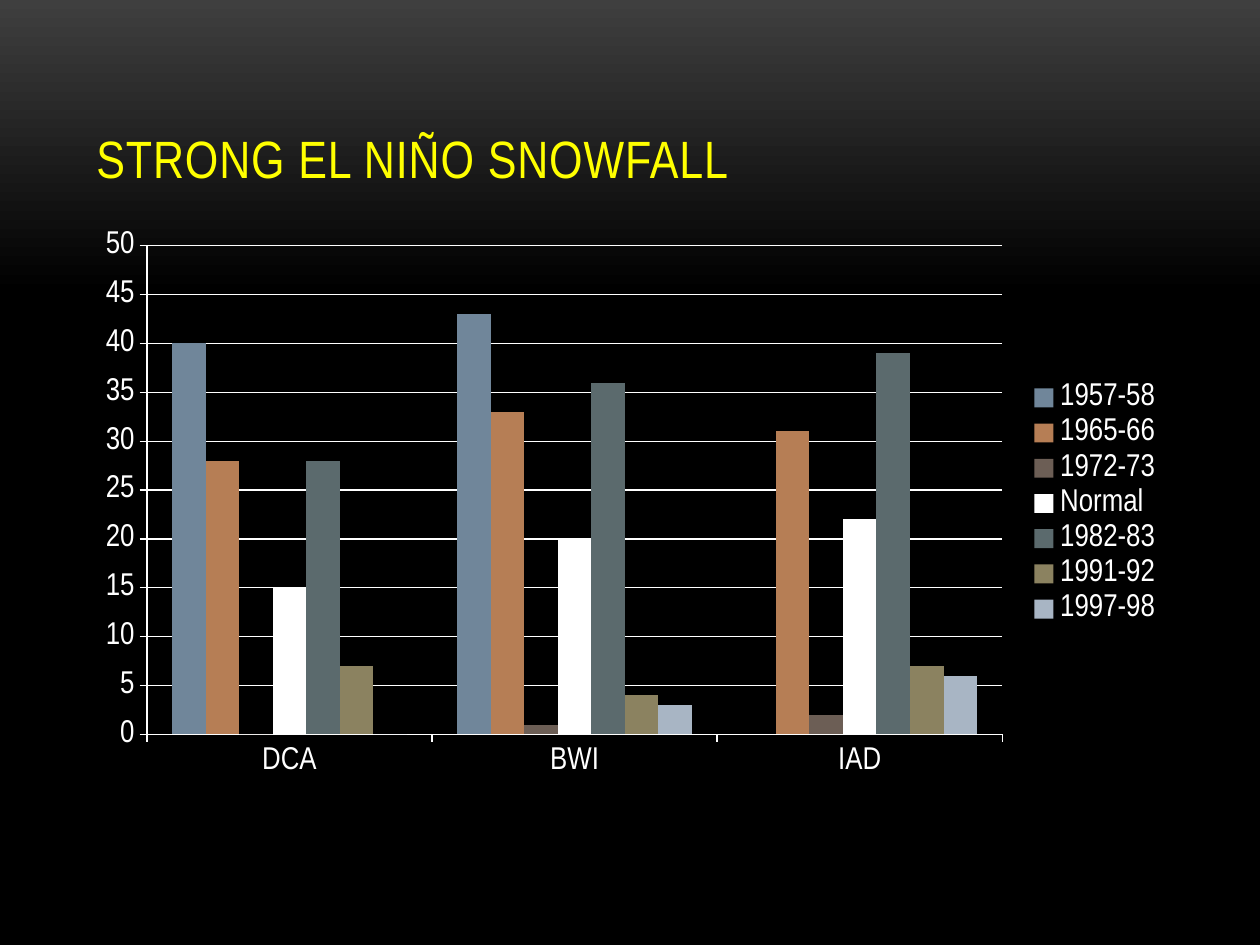
from pptx import Presentation
from pptx.chart.data import CategoryChartData
from pptx.dml.color import RGBColor
from pptx.enum.chart import XL_CHART_TYPE, XL_LEGEND_POSITION, XL_TICK_MARK
from pptx.enum.text import MSO_ANCHOR
from pptx.util import Emu, Pt

PX_PER_INCH = 126
FONT = "Arial Narrow"
COLORS = {
    "title": "FFFF00",
    "text": "FFFFFF",
    "glow": "3F3F3F",
    "night": "000000",
}
AIRPORTS = ["DCA", "BWI", "IAD"]
WINTERS = [
    ("1957-58", (40, 43, None), "70869A"),
    ("1965-66", (28, 33, 31), "B67E55"),
    ("1972-73", (0, 1, 2), "6C5E55"),
    ("Normal", (15, 20, 22), "FFFFFF"),
    ("1982-83", (28, 36, 39), "5B6A6D"),
    ("1991-92", (7, 4, 7), "8B8260"),
    ("1997-98", (0, 3, 6), "A8B5C4"),
]


def px(length):
    return Emu(round(length * 914400 / PX_PER_INCH))


def rgb(name):
    return RGBColor.from_string(COLORS[name])


def set_font(font, size, color):
    for name, value in {"name": FONT, "size": Pt(size), "bold": False}.items():
        setattr(font, name, value)
    font.color.rgb = rgb(color)


def paint_background(page):
    fill = page.background.fill
    fill.gradient()
    fill.gradient_angle = 270
    for stop, (position, color) in zip(
        fill.gradient_stops, [(0, "glow"), (0.31, "night")]
    ):
        stop.position = position
        stop.color.rgb = rgb(color)


def add_title(page, left, top, width, height):
    box = page.shapes.add_textbox(px(left), px(top), px(width), px(height))
    frame = box.text_frame
    frame.word_wrap = True
    frame.vertical_anchor = MSO_ANCHOR.BOTTOM
    span = frame.paragraphs[0].add_run()
    span.text = "STRONG EL NIÑO SNOWFALL"
    set_font(span.font, 30, "title")
    span.font._element.set("spc", "50")


def style_axis(axis):
    axis.major_tick_mark = XL_TICK_MARK.OUTSIDE
    axis.minor_tick_mark = XL_TICK_MARK.NONE
    axis.format.line.color.rgb = rgb("text")
    axis.format.line.width = Pt(0.75)


def add_snowfall_chart(page, left, top, width, height):
    data = CategoryChartData()
    data.categories = AIRPORTS
    for winter, inches, _ in WINTERS:
        data.add_series(winter, inches)
    chart = page.shapes.add_chart(
        XL_CHART_TYPE.COLUMN_CLUSTERED,
        px(left), px(top), px(width), px(height), data,
    ).chart
    set_font(chart.font, 18, "text")
    chart.has_title = False
    chart.has_legend = True
    chart.legend.position = XL_LEGEND_POSITION.RIGHT
    chart.legend.include_in_layout = False

    plot = chart.plots[0]
    plot.vary_by_categories = False
    plot.gap_width = 150
    plot.overlap = 0
    for series, (_, _, color) in zip(plot.series, WINTERS):
        series.invert_if_negative = False
        series.format.fill.solid()
        series.format.fill.fore_color.rgb = RGBColor.from_string(color)

    for axis in (chart.category_axis, chart.value_axis):
        style_axis(axis)
    scale = {"minimum_scale": 0, "maximum_scale": 50, "major_unit": 5,
             "has_major_gridlines": True}
    for name, value in scale.items():
        setattr(chart.value_axis, name, value)
    grid = chart.value_axis.major_gridlines.format.line
    grid.color.rgb = rgb("text")
    grid.width = Pt(0.75)


def main():
    deck = Presentation()
    deck.slide_width, deck.slide_height = px(1260), px(945)
    page = deck.slides.add_slide(deck.slide_layouts[6])
    paint_background(page)
    add_title(page, 84, 38, 1092, 157)
    add_snowfall_chart(page, 84, 220, 1092, 567)
    deck.save("out.pptx")


if __name__ == "__main__":
    main()
